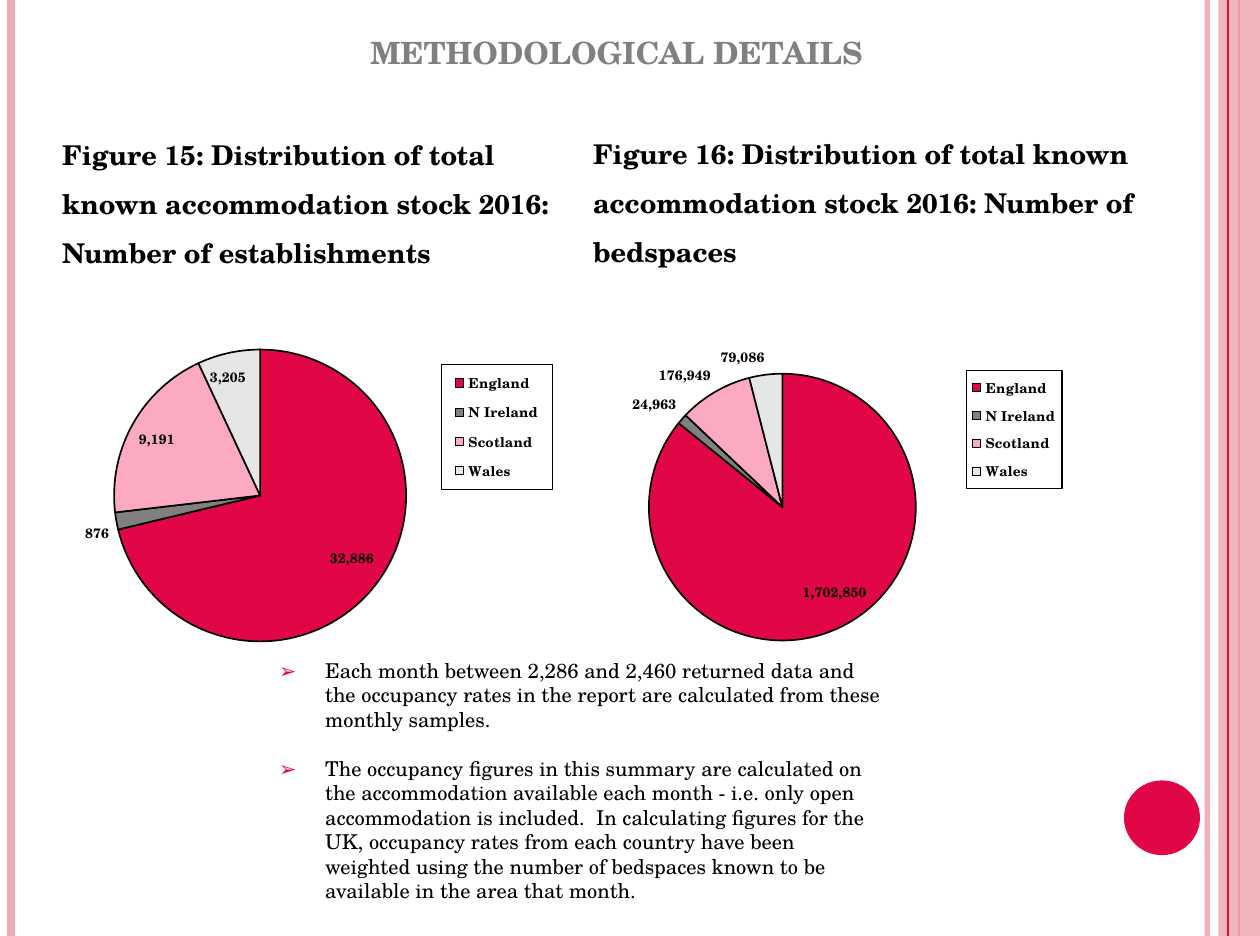
from dataclasses import dataclass

from lxml.etree import SubElement
from pptx import Presentation
from pptx.chart.data import CategoryChartData
from pptx.dml.color import RGBColor
from pptx.enum.chart import XL_CHART_TYPE, XL_LABEL_POSITION, XL_LEGEND_POSITION
from pptx.enum.shapes import MSO_CONNECTOR, MSO_SHAPE
from pptx.enum.text import MSO_AUTO_SIZE, PP_ALIGN
from pptx.oxml import parse_xml
from pptx.oxml.ns import nsdecls, qn
from pptx.util import Pt


@dataclass(frozen=True)
class Theme:
    """Colours, font and type sizes of the slide."""
    crimson: str = "E10747"
    rose: str = "EEABB1"
    pink: str = "FCAAC1"
    grey: str = "808080"
    pale: str = "E6E6E6"
    black: str = "000000"
    font: str = "TeX Gyre Schola"
    title: int = 18
    heading: int = 16
    body: int = 12
    label: int = 8


THEME = Theme()
WIDTH, HEIGHT = 740.16, 550.08
COUNTRIES = ("England", "N Ireland", "Scotland", "Wales")
INSIDE = XL_LABEL_POSITION.INSIDE_END
OUTSIDE = XL_LABEL_POSITION.OUTSIDE_END
NOTES = (
    "Each month between 2,286 and 2,460 returned data and the occupancy rates "
    "in the report are calculated from these monthly samples.",
    "The occupancy figures in this summary are calculated on the accommodation "
    "available each month - i.e. only open accommodation is included.  In "
    "calculating figures for the UK, occupancy rates from each country have been "
    "weighted using the number of bedspaces known to be available in the area "
    "that month.",
)


def rgb(value):
    """Return a colour from its hex value."""
    return RGBColor.from_string(value)


def set_opacity(shape, percent):
    """Make the colours of a shape partly transparent."""
    for color in shape._element.spPr.iter(qn("a:srgbClr")):
        SubElement(color, qn("a:alpha")).set("val", str(percent * 1000))


def add_stripe(page, x, color, weight, opacity=100):
    """Draw a vertical line over the whole slide height."""
    line = page.shapes.add_connector(
        MSO_CONNECTOR.STRAIGHT, Pt(x), Pt(0), Pt(x), Pt(HEIGHT))
    line.line.color.rgb = rgb(color)
    line.line.width = Pt(weight)
    if opacity < 100:
        set_opacity(line, opacity)
    SubElement(line._element.spPr, qn("a:effectLst"))


def add_solid(page, kind, bounds, color):
    """Add a filled preset shape without outline."""
    shape = page.shapes.add_shape(kind, *map(Pt, bounds))
    shape.shadow.inherit = False
    shape.fill.solid()
    shape.fill.fore_color.rgb = rgb(color)
    shape.line.fill.background()
    return shape


def add_decoration(page):
    """Draw the side stripes and the round marker."""
    add_stripe(page, 709.2, THEME.rose, 3, 93)
    add_stripe(page, 6.48, THEME.rose, 4.5)
    add_stripe(page, 727.92, THEME.crimson, 1.5)
    band = add_solid(page, MSO_SHAPE.RECTANGLE, (715.68, 0, 24.48, HEIGHT), THEME.rose)
    set_opacity(band, 87)
    add_stripe(page, 721.44, THEME.crimson, 0.75)
    add_solid(page, MSO_SHAPE.OVAL, (660.24, 458.64, 44.64, 43.92), THEME.crimson)


def add_bullet(para):
    """Give a paragraph a hanging arrow bullet."""
    properties = para._p.get_or_add_pPr()
    properties.set("marL", str(Pt(27)))
    properties.set("indent", str(-Pt(27)))
    color = SubElement(properties, qn("a:buClr"))
    SubElement(color, qn("a:srgbClr")).set("val", THEME.crimson)
    SubElement(properties, qn("a:buFont")).set("typeface", THEME.font)
    SubElement(properties, qn("a:buChar")).set("char", "➢")


def add_text(page, bounds, *texts, size, color=THEME.black, bold=False,
             align=PP_ALIGN.LEFT, spacing=1.0, after=0, bullet=False):
    """Add a wrapped text box with one paragraph for each text."""
    box = page.shapes.add_textbox(*map(Pt, bounds))
    frame = box.text_frame
    frame.word_wrap = True
    frame.auto_size = MSO_AUTO_SIZE.SHAPE_TO_FIT_TEXT
    for index, text in enumerate(texts):
        para = frame.add_paragraph() if index else frame.paragraphs[0]
        para.alignment = align
        para.line_spacing = spacing
        para.space_after = Pt(after)
        if bullet:
            add_bullet(para)
        span = para.add_run()
        span.text = text
        span.font.name = THEME.font
        span.font.size = Pt(size)
        span.font.bold = bold
        span.font.color.rgb = rgb(color)


def chart_layout(inner=False, **values):
    """Build a manual chart layout from fractions of the chart."""
    layout = parse_xml(f"<c:layout {nsdecls('c')}><c:manualLayout/></c:layout>")
    manual = layout[0]
    if inner:
        SubElement(manual, qn("c:layoutTarget")).set("val", "inner")
    if "w" in values:
        for mode in ("xMode", "yMode"):
            SubElement(manual, qn(f"c:{mode}")).set("val", "edge")
    for name, value in values.items():
        SubElement(manual, qn(f"c:{name}")).set("val", str(value))
    return layout


def add_legend(chart, bounds):
    """Add an outlined legend at the given place."""
    chart.has_legend = True
    legend = chart.legend
    legend.position = XL_LEGEND_POSITION.RIGHT
    legend.include_in_layout = False
    element = legend._element
    for layout in element.findall(qn("c:layout")):
        element.remove(layout)
    element.insert(1, chart_layout(**dict(zip("xywh", bounds))))
    element.append(parse_xml(
        f"<c:spPr {nsdecls('c', 'a')}><a:ln w='{Pt(0.75)}'><a:solidFill>"
        f"<a:srgbClr val='{THEME.black}'/></a:solidFill></a:ln></c:spPr>"))


def add_pie(page, bounds, values, positions, plot, legend, shifts):
    """Add a pie of the four countries, with label shifts by country."""
    data = CategoryChartData(number_format="#,##0")
    data.categories = COUNTRIES
    data.add_series("Series 1", values)
    chart = page.shapes.add_chart(XL_CHART_TYPE.PIE, *map(Pt, bounds), data).chart
    chart.has_title = False
    chart.font.name = THEME.font
    chart.font.size = Pt(THEME.label)
    chart.font.bold = True
    chart.font.color.rgb = rgb(THEME.black)
    chart.plots[0].vary_by_categories = True
    series = chart.plots[0].series[0]
    labels = series.data_labels
    labels.show_value = True
    labels.number_format = "#,##0"
    labels.number_format_is_linked = False
    colors = (THEME.crimson, THEME.grey, THEME.pink, THEME.pale)
    for index, (color, position) in enumerate(zip(colors, positions)):
        point = series.points[index]
        point.format.fill.solid()
        point.format.fill.fore_color.rgb = rgb(color)
        point.format.line.color.rgb = rgb(THEME.black)
        point.format.line.width = Pt(1)
        point.data_label.position = position
    for country, label in zip(COUNTRIES, labels._element.findall(qn("c:dLbl"))):
        if country in shifts:
            label.insert(1, chart_layout(**dict(zip("xy", shifts[country]))))
    area = chart._chartSpace.chart.plotArea
    for layout in area.findall(qn("c:layout")):
        area.remove(layout)
    area.insert(0, chart_layout(inner=True, **dict(zip("xywh", plot))))
    add_legend(chart, legend)


def main():
    """Build the slide and save the deck."""
    deck = Presentation()
    deck.slide_width, deck.slide_height = Pt(WIDTH), Pt(HEIGHT)
    page = deck.slides.add_slide(deck.slide_layouts[6])
    add_decoration(page)
    add_pie(page, (37.44, 108, 295.92, 366.48), (32886, 876, 9191, 3205),
            (INSIDE, OUTSIDE, INSIDE, INSIDE), (0.1, 0.06, 0.58, 0.88),
            (0.75, 0.29, 0.22, 0.2),
            {"England": (0.01, -0.02), "Wales": (-0.04, 0.01)})
    add_pie(page, (342.72, 115.2, 295.92, 365.76), (1702850, 24963, 176949, 79086),
            (INSIDE, OUTSIDE, OUTSIDE, OUTSIDE), (0.13, 0.07, 0.53, 0.86),
            (0.76, 0.28, 0.19, 0.19), {"England": (0.06, -0.03)})
    heading = dict(size=THEME.heading, bold=True, spacing=1.5, after=12)
    add_text(page, (29.52, 68.4, 311.76, 94.32), "Figure 15: Distribution of total known "
             "accommodation stock 2016: Number of establishments", **heading)
    add_text(page, (341.28, 67.68, 370.08, 94.32), "Figure 16: Distribution of total known "
             "accommodation stock 2016: Number of bedspaces", **heading)
    add_text(page, (156.96, 383.04, 370.08, 152.64), *NOTES,
             size=THEME.body, after=14.4, bullet=True)
    add_text(page, (177.12, 5.76, 370.08, 36), "METHODOLOGICAL DETAILS",
             size=THEME.title, color=THEME.grey, bold=True,
             align=PP_ALIGN.CENTER, spacing=1.5)
    deck.save("out.pptx")


if __name__ == "__main__":
    main()
